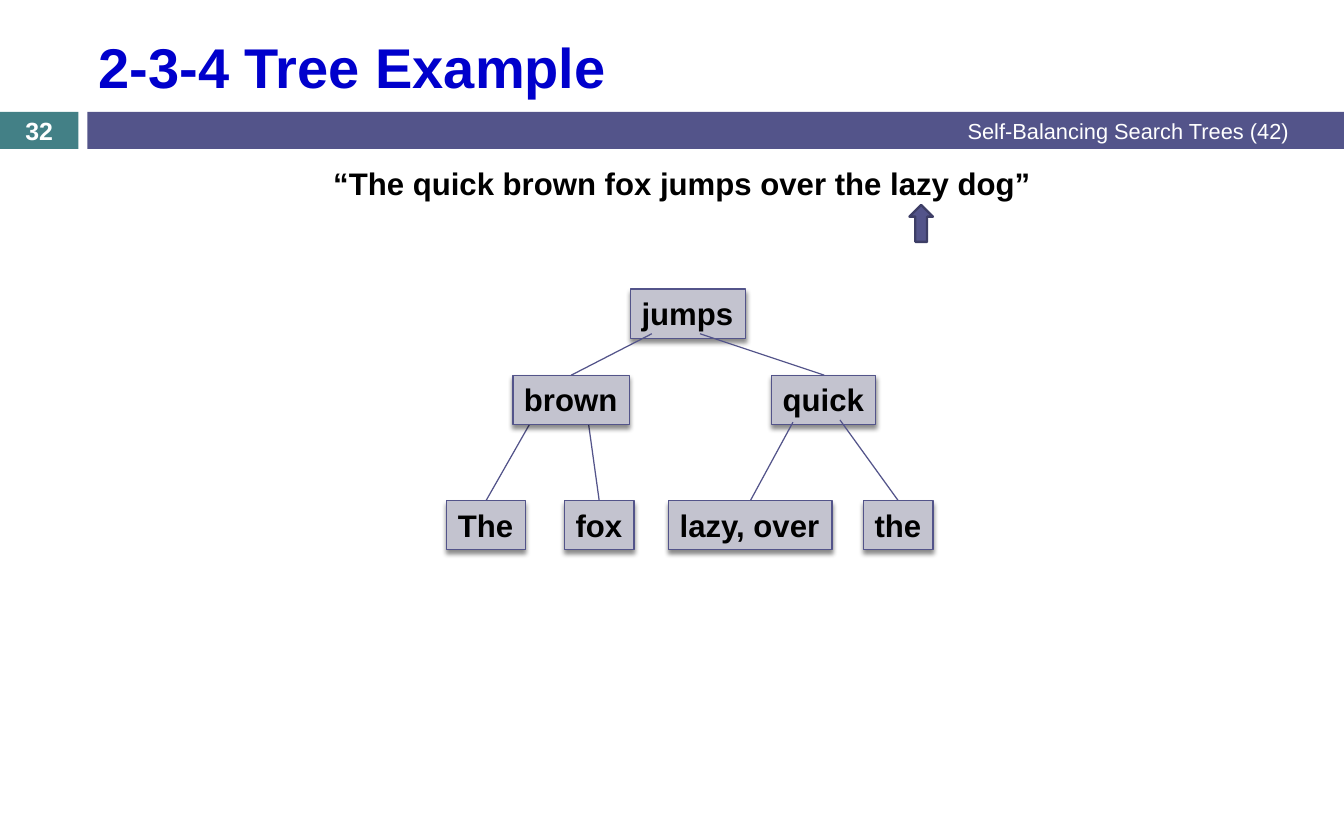
from typing import NamedTuple

from lxml.etree import SubElement
from pptx import Presentation
from pptx.dml.color import RGBColor
from pptx.enum.shapes import MSO_CONNECTOR, MSO_SHAPE
from pptx.enum.text import MSO_ANCHOR, MSO_AUTO_SIZE, PP_ALIGN
from pptx.oxml.ns import qn
from pptx.util import Inches, Pt

HUES = {
    "title": "0000CC",
    "text": "000000",
    "light": "FFFFFF",
    "teal": "438086",
    "violet": "53548A",
    "edge": "3D3E66",
    "node": "C3C3CF",
}
FACE = "Arial"
COLS, ROWS = 120, 75  # grid over the whole slide


class Box(NamedTuple):
    col: float
    row: float
    wide: float
    high: float


class Node(NamedTuple):
    word: str
    col: float
    row: float
    wide: float


class Link(NamedTuple):
    col: float
    row: float
    end_col: float
    end_row: float


TOP, MID, LOW = 25.8, 33.5, 44.7  # rows of the tree levels
NODE_HIGH = 4.4
NODES = (
    Node("The", 39.9, LOW, 7),
    Node("quick", 68.9, MID, 9.3),
    Node("fox", 50.4, LOW, 6.2),
    Node("lazy, over", 59.7, LOW, 14.6),
    Node("the", 77.1, LOW, 6.2),
    Node("brown", 45.8, MID, 10.4),
    Node("jumps", 56.3, TOP, 10.3),
)
# Links that start behind their parent, and links that start in front of it
BACK = (Link(52.5, 37.5, 53.5, LOW), Link(47.5, 37.5, 43.4, LOW))
FRONT = (
    Link(70.8, 37.7, 67, LOW),
    Link(75, 37.5, 80.2, LOW),
    Link(62.5, 29.8, 73.6, MID),
    Link(58.2, 29.8, 51, MID),
)

deck = Presentation()
deck.slide_width, deck.slide_height = Inches(12), Inches(7.5)
slide = deck.slides.add_slide(deck.slide_layouts[5])
shapes = slide.shapes


def across(cols: float) -> int:
    return round(deck.slide_width * cols / COLS)


def down(rows: float) -> int:
    return round(deck.slide_height * rows / ROWS)


def place(box: Box) -> tuple:
    return across(box.col), down(box.row), across(box.wide), down(box.high)


def hue(name: str) -> RGBColor:
    return RGBColor.from_string(HUES[name])


def write(shape, text: str, size: float, tint: str, bold: bool = True,
          align=PP_ALIGN.LEFT, anchor=MSO_ANCHOR.MIDDLE, wrap: bool = True):
    frame = shape.text_frame
    frame.text = text
    frame.word_wrap = wrap
    frame.vertical_anchor = anchor
    frame.auto_size = MSO_AUTO_SIZE.NONE
    line = frame.paragraphs[0]
    line.alignment = align
    font = line.font
    font.name, font.size, font.bold = FACE, Pt(size), bold
    font.color.rgb = hue(tint)
    return line


def block(box: Box, fill: str, kind=MSO_SHAPE.RECTANGLE,
          edge: str = "", width: float = 0):
    shape = shapes.add_shape(kind, *place(box))
    shape.shadow.inherit = False
    shape.fill.solid()
    shape.fill.fore_color.rgb = hue(fill)
    if edge:
        shape.line.color.rgb = hue(edge)
        shape.line.width = Pt(width)
    else:
        shape.line.fill.background()
    return shape


def label(box: Box, text: str, size: float, tint: str, **style):
    return write(shapes.add_textbox(*place(box)), text, size, tint, **style)


def shade(shape) -> None:
    """Cast a soft shadow straight down."""
    effects = shape._element.spPr.find(qn("a:effectLst"))
    cast = SubElement(effects, qn("a:outerShdw"), blurRad=str(Pt(3)),
                      dist=str(Pt(2.4)), dir="5400000", rotWithShape="0")
    color = SubElement(cast, qn("a:srgbClr"), val=HUES["text"])
    SubElement(color, qn("a:alpha"), val="45000")


def draw_node(node: Node) -> None:
    box = Box(node.col, node.row, node.wide, NODE_HIGH)
    shape = block(box, "node", edge="violet", width=0.79)
    shade(shape)
    write(shape, node.word, 20, "text", anchor=MSO_ANCHOR.TOP, wrap=False)
    shape.text_frame.auto_size = MSO_AUTO_SIZE.SHAPE_TO_FIT_TEXT


def draw_link(link: Link) -> None:
    line = shapes.add_connector(
        MSO_CONNECTOR.STRAIGHT, across(link.col), down(link.row),
        across(link.end_col), down(link.end_row))
    line.line.color.rgb = hue("violet")
    line.line.width = Pt(0.79)
    SubElement(line._element.spPr, qn("a:effectLst"))


# Title
title = shapes.title
title.left, title.top, title.width, title.height = place(Box(7.8, 1.9, 107, 8))
write(title, "2-3-4 Tree Example", 36, "title")

# Header band
page = Box(0, 10, 7, 3.3)
block(page, "teal")
block(Box(7.8, 10, 112.2, 3.3), "violet")
label(Box(45, 9.9, 71.1, 3.5), "Self-Balancing Search Trees (42)", 14, "light",
      bold=False, align=PP_ALIGN.RIGHT)
label(page, "32", 16, "light", align=PP_ALIGN.CENTER)

# Sentence, with an arrow at the current word
quote = label(Box(16.7, 14.2, 89.2, 5),
              "“The quick brown fox jumps over the lazy dog” ", 20, "text",
              align=PP_ALIGN.CENTER, anchor=MSO_ANCHOR.TOP)
quote.space_before = Pt(7)
block(Box(81.2, 18.3, 2.1, 3.3), "violet", MSO_SHAPE.UP_ARROW, "edge", 1.5)

# Tree
for link in BACK:
    draw_link(link)
for node in NODES:
    draw_node(node)
for link in FRONT:
    draw_link(link)

deck.save("out.pptx")
